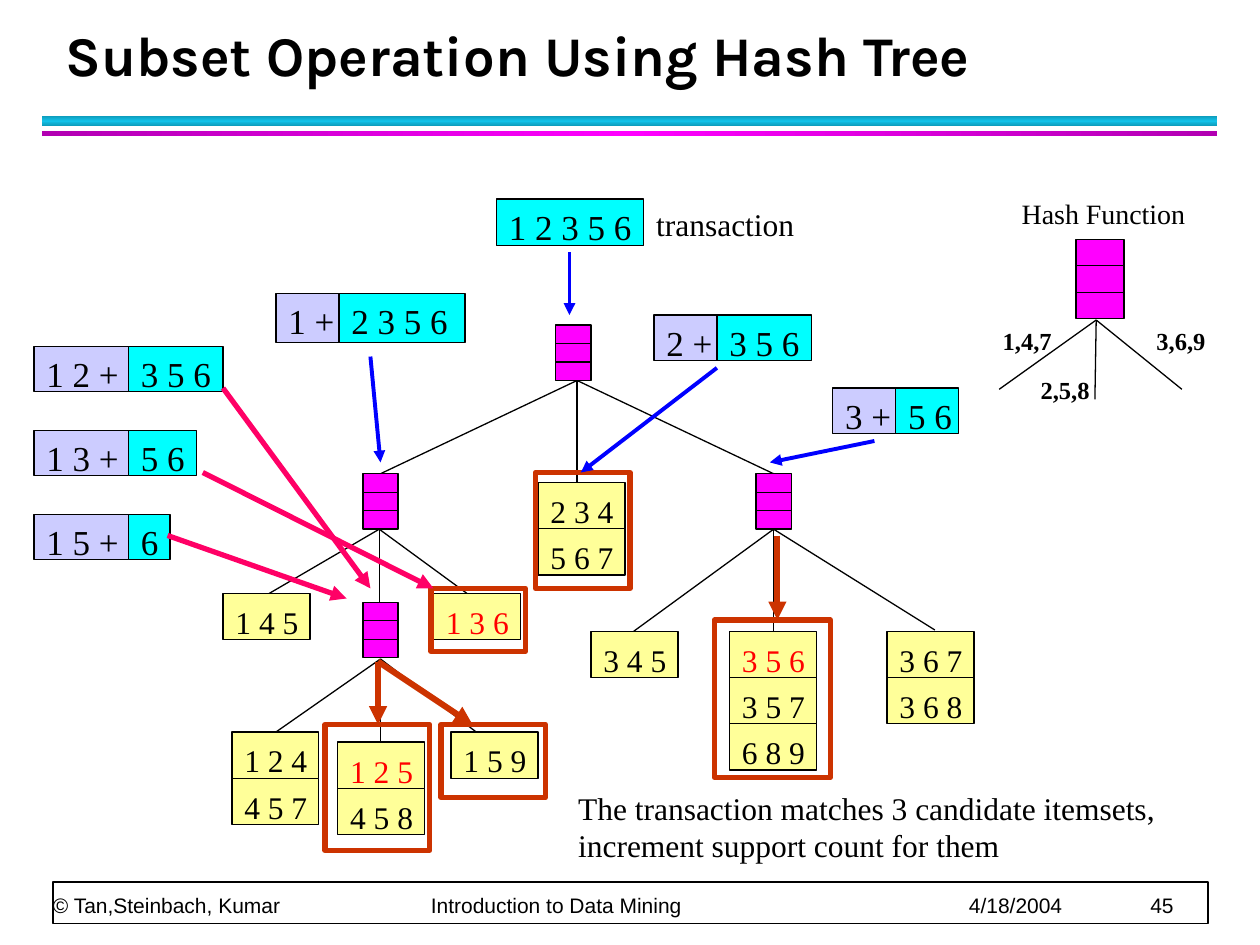
from copy import deepcopy

from lxml import etree
from pptx import Presentation
from pptx.dml.color import RGBColor
from pptx.enum.shapes import MSO_CONNECTOR, MSO_SHAPE
from pptx.enum.text import MSO_ANCHOR, MSO_AUTO_SIZE, PP_ALIGN
from pptx.oxml.ns import qn
from pptx.util import Inches, Pt

RECT = MSO_SHAPE.RECTANGLE
LINE = MSO_CONNECTOR.STRAIGHT
TOP, BOTTOM = MSO_ANCHOR.TOP, MSO_ANCHOR.BOTTOM
LEFT = PP_ALIGN.LEFT
FIXED = MSO_AUTO_SIZE.NONE
SERIF, SANS, HEAD = "Times New Roman", "Arial", "Karla"
BLACK, WHITE, RED = "000000", "FFFFFF", "FF0000"
PINK, CYAN, LILAC, YELLOW = "FF00FF", "00FFFF", "CCCCFF", "FFFF99"
BLUE, ROSE, RUST = "0000FF", "FF0066", "CC3300"
COLS = 100


def rgb(code):
    return RGBColor.from_string(code)


class Board:
    def __init__(self, deck):
        self.cell = deck.slide_width / COLS
        self.slide = deck.slides.add_slide(deck.slide_layouts[5])
        self.shapes = self.slide.shapes

    def grid(self, *spots):
        return [round(spot * self.cell) for spot in spots]

    def letter(self, shape, text, size, font=SERIF, color=BLACK, bold=False,
               inset=(1, 0.5, 0, 0), anchor=TOP, wrap=True, space=None):
        frame = shape.text_frame
        frame.text = text
        frame.auto_size = FIXED
        frame.word_wrap = wrap
        frame.vertical_anchor = anchor
        (frame.margin_left, frame.margin_top,
         frame.margin_right, frame.margin_bottom) = self.grid(*inset)
        para = frame.paragraphs[0]
        para.alignment = LEFT
        if space:
            para.line_spacing = Pt(space)
        for run in para.runs:
            run.font.name, run.font.size, run.font.bold = font, Pt(size), bold
            run.font.color.rgb = rgb(color)
        return para

    def title(self, box, text):
        shape = self.shapes.title
        shape.left, shape.top, shape.width, shape.height = self.grid(*box)
        self.letter(shape, text, 32, HEAD, bold=True, anchor=BOTTOM,
                    inset=(1, 0.5, 1, 0.5), space=36)

    def rect(self, box, fill=None, line=BLACK, width=0.75):
        shape = self.shapes.add_shape(RECT, *self.grid(*box))
        shape.shadow.inherit = False
        if fill:
            shape.fill.solid()
            shape.fill.fore_color.rgb = rgb(fill)
        else:
            shape.fill.background()
        if line:
            shape.line.color.rgb = rgb(line)
            shape.line.width = Pt(width)
        else:
            shape.line.fill.background()
        return shape

    def band(self, box, edge, core, angle):
        shape = self.rect(box, line=None)
        shape.fill.gradient()
        shape.fill.gradient_angle = angle
        stops = shape._element.spPr.find(qn("a:gradFill")).find(qn("a:gsLst"))
        stops.insert(1, deepcopy(stops[0]))
        for stop, color, place in zip(shape.fill.gradient_stops,
                                      (edge, core, edge), (0, 0.5, 1)):
            stop.color.rgb = rgb(color)
            stop.position = place

    def label(self, box, text, size, bold=False, wrap=False):
        shape = self.shapes.add_textbox(*self.grid(*box))
        self.letter(shape, text, size, bold=bold, wrap=wrap,
                    inset=(1, 0.5, 1, 0.5))

    def line(self, start, end, color=BLACK, width=0.75, arrow=False):
        link = self.shapes.add_connector(LINE, *self.grid(*start, *end))
        link.line.color.rgb = rgb(color)
        link.line.width = Pt(width)
        shell = link._element.spPr
        if arrow:
            tail = etree.SubElement(shell.find(qn("a:ln")), qn("a:tailEnd"))
            tail.set("type", "triangle")
        etree.SubElement(shell, qn("a:effectLst"))

    def node(self, box, root, tips):
        x, y, w, h = box
        for tip in tips:
            self.line(root, tip)
        self.rect(box, PINK)
        for part in (1, 2):
            level = y + h * part / 3
            self.line((x, level), (x + w, level))

    def leaf(self, x, y, sets, hits):
        for row, text in enumerate(sets):
            shape = self.rect((x, y + row * 3.67, 6.9, 3.67), YELLOW)
            color = RED if text in hits else BLACK
            self.letter(shape, text, 18, color=color, inset=(1, 0.75, 0, 0))

    def split(self, x, y, parts, high=3.6):
        for fill, (wide, text) in zip((LILAC, CYAN), parts):
            self.letter(self.rect((x, y, wide, high), fill), text, 20)
            x += wide

    def footer(self, box, parts, tabs):
        shape = self.rect(box, WHITE, width=1)
        para = self.letter(shape, "\t".join(parts), 12, SANS, anchor=BOTTOM,
                           inset=(0, 0, 0, 0.5), space=20)
        stops = etree.SubElement(para._p.get_or_add_pPr(), qn("a:tabLst"))
        for spot in self.grid(*tabs):
            etree.SubElement(stops, qn("a:tab"), pos=str(spot), algn="l")


def main():
    deck = Presentation()
    deck.slide_width, deck.slide_height = Inches(10), Inches(7.5)
    board = Board(deck)

    board.band((3.3, 9.2, 93.3, 0.8), "0E9BBA", "12C2E9", 90)
    board.band((3.3, 10.4, 93.3, 0.4), "B200B2", PINK, 0)
    board.footer((4.2, 70, 91.7, 3.3),
                 ("© Tan,Steinbach, Kumar", "Introduction to Data Mining",
                  "4/18/2004", "45"), (30, 72.7, 87.1))
    board.title((4.2, 1.7, 90.6, 5.8), "Subset Operation Using Hash Tree")

    small, large = (2.8, 4.4), (3.8, 6.3)
    nodes = [
        ((44.1, 25.8), small, (45.8, 30.2),
         ((30.2, 37.6), (45.8, 38.3), (61.4, 37.6))),
        ((28.8, 37.6), small, (30.1, 42),
         ((21.2, 47.2), (30.1, 47.8), (37.2, 47.2))),
        ((60, 37.6), small, (61.4, 42),
         ((50.3, 50.1), (61.4, 50.1), (74.2, 50))),
        ((28.8, 47.8), small, (30.2, 52.3),
         ((21.9, 58.1), (30.2, 58.9), (37.8, 58.1))),
        ((85.4, 19), large, (87, 25.4),
         ((79.3, 30.9), (86.9, 31.7), (93.8, 30.9))),
    ]
    for spot, size, root, tips in nodes:
        board.node(spot + size, root, tips)

    hits = {"1 3 6", "3 5 6", "1 2 5"}
    for x, y, sets in [
        (17.7, 47.1, ["1 4 5"]),
        (34.4, 47.1, ["1 3 6"]),
        (18.4, 58.1, ["1 2 4", "4 5 7"]),
        (26.8, 58.9, ["1 2 5", "4 5 8"]),
        (35.8, 58.1, ["1 5 9"]),
        (42.7, 38.3, ["2 3 4", "5 6 7"]),
        (46.9, 50.1, ["3 4 5"]),
        (57.9, 50.1, ["3 5 6", "3 5 7", "6 8 9"]),
        (70.4, 50.1, ["3 6 7", "3 6 8"]),
    ]:
        board.leaf(x, y, sets, hits)

    board.letter(board.rect((39.4, 15.8, 11.7, 3.7), CYAN), "1 2 3 5 6", 20)
    board.split(21.9, 23.3, ((5, "1 +"), (10, "2 3 5 6")), 3.9)
    board.split(51.9, 25, ((5, "2 +"), (7.5, "3 5 6")))
    board.split(66.1, 30.8, ((5, "3 +"), (5, "5 6")))
    for row, (head, wide, rest) in enumerate(
            [("1 2 +", 7.5, "3 5 6"), ("1 3 +", 5.4, "5 6"),
             ("1 5 +", 3.3, "6")]):
        board.split(2.7, 27.5 + row * 6.67, ((7.5, head), (wide, rest)))

    for box in [(25.8, 57.5, 8.3, 10), (35, 57.5, 8.3, 5.8),
                (42.5, 37.5, 7.5, 9.2), (34.2, 46.7, 7.5, 5),
                (56.7, 49.2, 9.2, 12.5)]:
        board.rect(box, line=RUST, width=3)

    for color, width, routes in [
        (BLUE, 2.25, [((45.2, 20), (45.2, 25)), ((29.4, 28.3), (30.2, 36.7)),
                      ((56.9, 29.2), (46.1, 37.5)),
                      ((69.4, 35), (61.1, 36.7))]),
        (ROSE, 3, [((17.7, 30.8), (29.4, 46.7)), ((13.3, 42.5), (27.5, 47.5)),
                   ((16.1, 37.5), (34.4, 46.7))]),
        (RUST, 3.5, [((30, 52.5), (30, 57.5)), ((30, 52.5), (37.5, 57.5)),
                     ((61.7, 42.5), (61.7, 49.2))]),
    ]:
        for start, end in routes:
            board.line(start, end, color, width, arrow=True)

    board.label((80.1, 15.1, 15.1, 3.7), "Hash Function", 16)
    for x, y, text in [(78.6, 25.4, "1,4,7"), (81.6, 29.3, "2,5,8"),
                       (90.8, 25.4, "3,6,9")]:
        board.label((x, y, 5.9, 3.3), text, 14, bold=True)
    board.label((51.1, 15.8, 13, 4), "transaction", 18)
    board.label((44.9, 62.1, 53.4, 7.1),
                "The transaction matches 3 candidate itemsets, "
                "increment support count for them", 18, wrap=True)

    deck.save("out.pptx")


if __name__ == "__main__":
    main()
